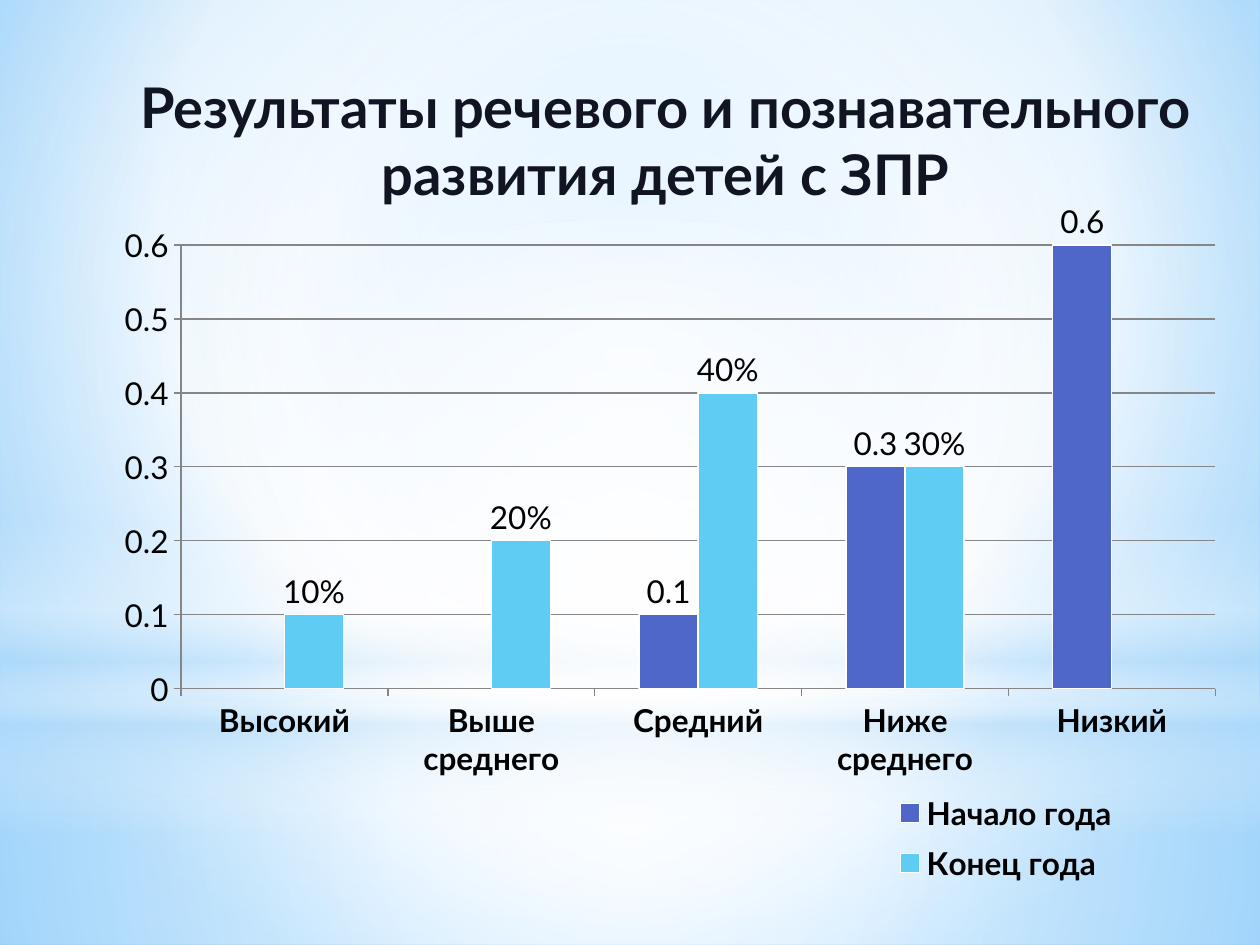
import pptx
import pptx.chart.data
import pptx.dml.color
import pptx.enum.chart
import pptx.enum.shapes
import pptx.enum.text
import pptx.oxml
import pptx.oxml.ns
import pptx.util

PX_PER_INCH = 126
FONT = "Lato"
WHITE, SKY, GRID = "FFFFFF", "B4DCFA", "868686"
LEVELS = ["Высокий", "Выше среднего", "Средний", "Ниже среднего", "Низкий"]
# name, values, colour, label format
SERIES = [
    ("Начало года", [None, None, 0.1, 0.3, 0.6], "4E67C8", "General"),
    ("Конец года", [0.1, 0.2, 0.4, 0.3, None], "5ECCF3", "0%"),
]
CENTRE = (50, 50, 50, 50)


def px(length):
    return pptx.util.Emu(round(length * 914400 / PX_PER_INCH))


def color(hex_code):
    return pptx.dml.color.RGBColor.from_string(hex_code)


def style_font(font, size, hex_code, bold=False):
    font.name = FONT
    font.size = pptx.util.Pt(size)
    font.bold = bold
    font.color.rgb = color(hex_code)


def set_gradient(owner, stops, focus=None, angle=0):
    """Fill a shape or background; stops are (position %, colour, opacity %)."""
    owner.fill.solid()
    return_stops = "".join(
        f'<a:gs pos="{pos * 1000}"><a:srgbClr val="{hex_code}">'
        f'<a:alpha val="{opacity * 1000}"/></a:srgbClr></a:gs>'
        for pos, hex_code, opacity in stops)
    if focus:
        left, top, right, bottom = (side * 1000 for side in focus)
        shade = (f'<a:path path="circle"><a:fillToRect l="{left}" t="{top}" '
                 f'r="{right}" b="{bottom}"/></a:path>')
    else:
        shade = f'<a:lin ang="{angle * 60000}" scaled="0"/>'
    return pptx.oxml.parse_xml(
        f'<a:gradFill {pptx.oxml.ns.nsdecls("a")} rotWithShape="1">'
        f'<a:gsLst>{return_stops}</a:gsLst>{shade}</a:gradFill>')


def replace_fill(element, gradient):
    solid = element.find(".//" + pptx.oxml.ns.qn("a:solidFill"))
    solid.getparent().replace(solid, gradient)


def add_glow(slide, kind, box, stops, focus=None, angle=0):
    glow = slide.shapes.add_shape(kind, *map(px, box))
    glow.shadow.inherit = False
    glow.line.fill.background()
    replace_fill(glow.element, set_gradient(glow, stops, focus, angle))


def add_backdrop(slide):
    sky = [(0, "9ED5FF", 100), (60, WHITE, 100), (100, "5BB9FF", 100)]
    replace_fill(slide.element,
                 set_gradient(slide.background, sky, (20, 10, 20, 60)))
    shapes = pptx.enum.shapes.MSO_SHAPE
    add_glow(slide, shapes.RECTANGLE, (0, 703, 1260, 242),
             [(0, WHITE, 91), (37, WHITE, 76), (100, SKY, 79)], CENTRE)
    add_glow(slide, shapes.RECTANGLE, (0, 0, 1260, 703),
             [(0, WHITE, 89), (48, WHITE, 62), (100, SKY, 79)], CENTRE)
    add_glow(slide, shapes.RECTANGLE, (0, 519, 1260, 315),
             [(0, WHITE, 0), (29, WHITE, 30), (45, SKY, 40),
              (55, WHITE, 26), (65, SKY, 60), (100, WHITE, 0)], angle=90)
    add_glow(slide, shapes.OVAL, (0, 220, 1260, 703),
             [(0, WHITE, 100), (56, WHITE, 0)], CENTRE)


def place(element, x, y, width, height, inner=False):
    """Set the manual layout of a chart part, in fractions of the chart."""
    layout = element.find(pptx.oxml.ns.qn("c:layout"))
    if layout is not None:
        element.remove(layout)
    target = '<c:layoutTarget val="inner"/>' if inner else ""
    layout = pptx.oxml.parse_xml(
        f'<c:layout {pptx.oxml.ns.nsdecls("c")}><c:manualLayout>{target}'
        f'<c:xMode val="edge"/><c:yMode val="edge"/><c:x val="{x}"/>'
        f'<c:y val="{y}"/><c:w val="{width}"/><c:h val="{height}"/>'
        f'</c:manualLayout></c:layout>')
    element.insert(0 if inner else 1, layout)


def style_line(line, hex_code):
    line.color.rgb = color(hex_code)
    line.width = pptx.util.Pt(0.75)


def add_results_chart(slide, box):
    results = pptx.chart.data.CategoryChartData()
    results.categories = LEVELS
    for name, values, _, number_format in SERIES:
        results.add_series(name, values, number_format)
    chart = slide.shapes.add_chart(
        pptx.enum.chart.XL_CHART_TYPE.COLUMN_CLUSTERED,
        *map(px, box), results).chart
    chart.has_title = False
    style_font(chart.font, 18, "000000")

    # Columns and their labels
    plot = chart.plots[0]
    plot.gap_width = 150
    plot.overlap = 0
    plot.vary_by_categories = False
    for series, (_, _, fill, number_format) in zip(plot.series, SERIES):
        series.format.fill.solid()
        series.format.fill.fore_color.rgb = color(fill)
        style_line(series.format.line, WHITE)
        labels = series.data_labels
        labels.show_value = True
        labels.number_format = number_format
        labels.number_format_is_linked = False
        labels.position = pptx.enum.chart.XL_LABEL_POSITION.OUTSIDE_END

    # Axes
    levels, shares = chart.category_axis, chart.value_axis
    for axis in (levels, shares):
        axis.major_tick_mark = pptx.enum.chart.XL_TICK_MARK.OUTSIDE
        style_line(axis.format.line, GRID)
    style_font(levels.tick_labels.font, 18, "000000", bold=True)
    shares.minimum_scale, shares.maximum_scale = 0, 0.6
    shares.major_unit = 0.1
    shares.tick_labels.number_format = "General"
    shares.tick_labels.number_format_is_linked = False
    style_line(shares.major_gridlines.format.line, GRID)

    # Legend and layout
    chart.has_legend = True
    legend = chart.legend
    legend.position = pptx.enum.chart.XL_LEGEND_POSITION.RIGHT
    legend.include_in_layout = False
    style_font(legend.font, 18, "000000", bold=True)
    plot_area = chart.element.find(".//" + pptx.oxml.ns.qn("c:plotArea"))
    legend_area = chart.element.find(".//" + pptx.oxml.ns.qn("c:legend"))
    place(plot_area, 0.06, 0.21, 0.94, 0.52, inner=True)
    place(legend_area, 0.7, 0.84, 0.22, 0.13)


def add_title(slide, box, text):
    title = slide.shapes.add_textbox(*map(px, box)).text_frame
    title.word_wrap = True
    title.auto_size = pptx.enum.text.MSO_AUTO_SIZE.SHAPE_TO_FIT_TEXT
    heading = title.paragraphs[0]
    heading.alignment = pptx.enum.text.PP_ALIGN.CENTER
    run = heading.add_run()
    run.text = text
    style_font(run.font, 32, "111422", bold=True)


def main():
    deck = pptx.Presentation()
    deck.slide_width, deck.slide_height = px(1260), px(945)
    slide = deck.slides.add_slide(deck.slide_layouts[6])
    add_backdrop(slide)
    add_results_chart(slide, (115, 66, 1101, 853))
    add_title(slide, (95, 66, 1142, 149),
              "Результаты речевого и познавательного развития детей с ЗПР")
    deck.save("out.pptx")


if __name__ == "__main__":
    main()
